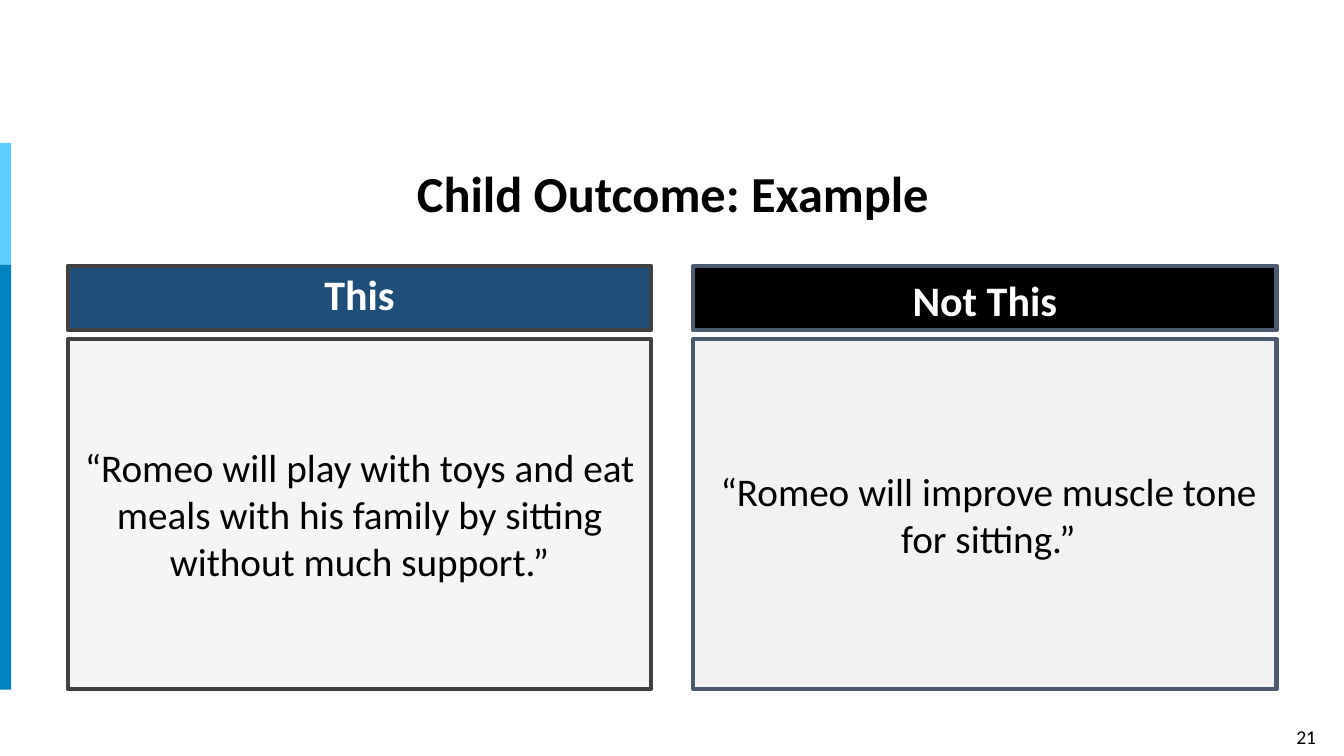
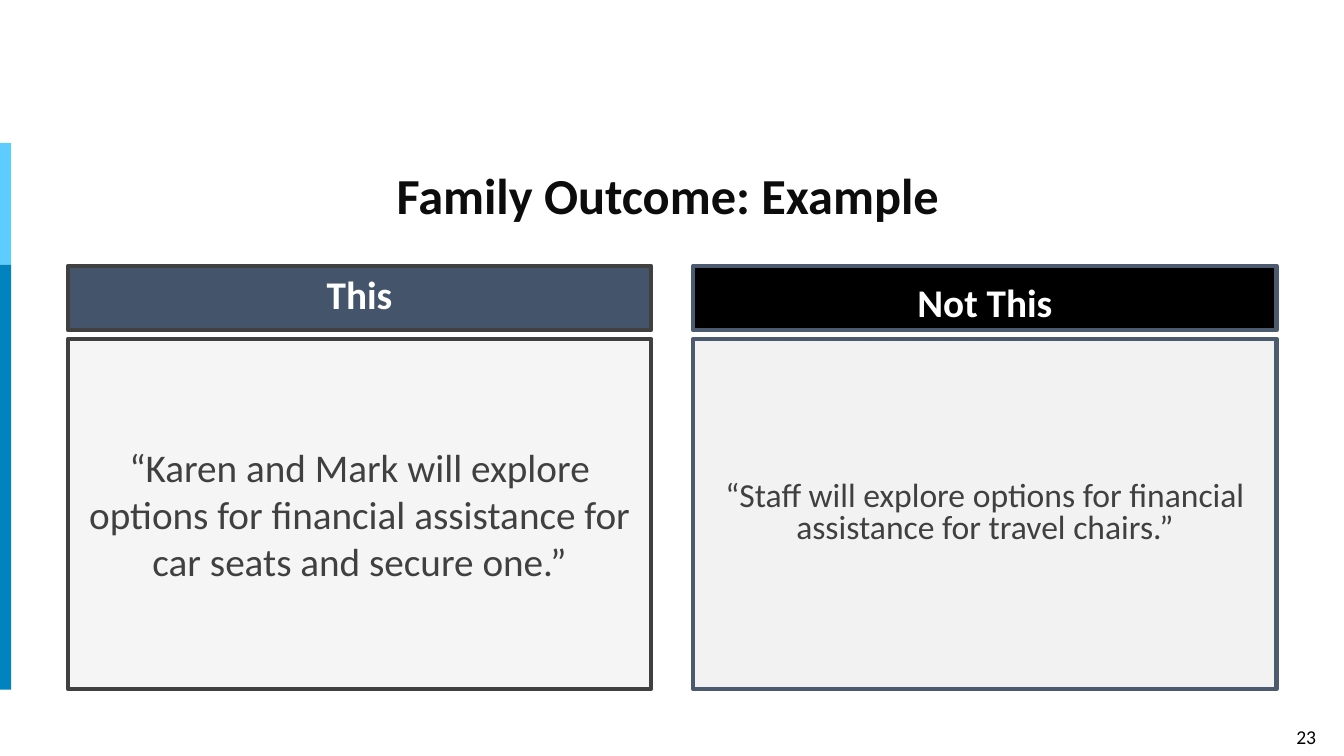
from dataclasses import dataclass

from pptx import Presentation
from pptx.dml.color import RGBColor
from pptx.enum.shapes import MSO_SHAPE
from pptx.enum.text import MSO_ANCHOR, MSO_AUTO_SIZE, PP_ALIGN
from pptx.oxml.xmlchemy import OxmlElement
from pptx.util import Cm, Pt

FONT = "Calibri"
COLORS = {
    "white": "FFFFFF",
    "black": "000000",
    "ink": "0C0C0C",
    "charcoal": "404040",
    "navy": "1F4E79",
    "slate": "44546A",
    "slate_line": "4B5A6F",
    "pale": "F5F5F5",
    "pale_grey": "F2F2F2",
    "sky": "5DCDFF",
    "ocean": "0083BF",
}
INSETS = (0.25, 0.13, 0.25, 0.13)
TITLE_BOX = (1.71, 3.25, 30.5, 3.2)
COLUMN_LEFT, COLUMN_TOP = 1.71, 6.7
COLUMN_WIDTH, COLUMN_HEIGHT = 14.7, 10.66
COLUMN_GAP = 1.06
HEADER_HEIGHT, HEADER_GAP = 1.62, 0.22
PAGE_BOX = (32.08, 18.14, 1.68, 0.86)
BANDS = [("sky", 3.6, 3.07), ("ocean", 6.67, 10.71)]


@dataclass
class TextStyle:
    size: int
    color: str
    bold: bool = False
    spacing: float = 1.0
    anchor: MSO_ANCHOR = MSO_ANCHOR.MIDDLE
    indent: float = 0
    insets: tuple = INSETS


@dataclass
class Panel:
    heading: str
    heading_style: TextStyle
    heading_fill: str
    quote: str
    quote_style: TextStyle
    quote_fill: str
    line: str


def rgb(name):
    return RGBColor.from_string(COLORS[name])


def place(shape, box):
    shape.left, shape.top, shape.width, shape.height = (Cm(value) for value in box)


def paint(shape, fill=None, line=None, line_width=3):
    if fill:
        shape.fill.solid()
        shape.fill.fore_color.rgb = rgb(fill)
    else:
        shape.fill.background()
    if line:
        shape.line.color.rgb = rgb(line)
        shape.line.width = Pt(line_width)
    else:
        shape.line.fill.background()


def write(shape, text, style):
    frame = shape.text_frame
    frame.word_wrap = True
    frame.auto_size = MSO_AUTO_SIZE.NONE
    frame.vertical_anchor = style.anchor
    (frame.margin_left, frame.margin_top,
     frame.margin_right, frame.margin_bottom) = (Cm(value) for value in style.insets)
    paragraph = frame.paragraphs[0]
    paragraph.alignment = PP_ALIGN.CENTER
    paragraph.line_spacing = style.spacing
    paragraph.space_before = Pt(0)
    properties = paragraph._p.get_or_add_pPr()
    properties.set("marL", str(Cm(style.indent)))
    properties.set("indent", "0")
    properties.append(OxmlElement("a:buNone"))
    run = paragraph.add_run()
    run.text = text
    run.font.name = FONT
    run.font.size = Pt(style.size)
    run.font.bold = style.bold
    run.font.color.rgb = rgb(style.color)


def add_rectangle(slide, box):
    shape = slide.shapes.add_shape(MSO_SHAPE.RECTANGLE, *(Cm(value) for value in box))
    shape.shadow.inherit = False
    return shape


def add_frame(slide, page_number):
    for color, top, height in BANDS:
        paint(add_rectangle(slide, (-0.08, top, 0.36, height)), color)
    number = add_rectangle(slide, PAGE_BOX)
    paint(number, line="white", line_width=0.75)
    write(number, str(page_number), TextStyle(14, "black", anchor=MSO_ANCHOR.TOP))


def fill_panel(header, body, box, panel):
    left, top, width, height = box
    offset = HEADER_HEIGHT + HEADER_GAP
    place(header, (left, top, width, HEADER_HEIGHT))
    paint(header, panel.heading_fill, panel.line)
    write(header, panel.heading, panel.heading_style)
    place(body, (left, top + offset, width, height - offset))
    paint(body, panel.quote_fill, panel.line)
    write(body, panel.quote, panel.quote_style)


def add_comparison(presentation, title, title_style, panels, page_number):
    slide = presentation.slides.add_slide(presentation.slide_layouts[4])
    add_frame(slide, page_number)
    place(slide.shapes.title, TITLE_BOX)
    write(slide.shapes.title, title, title_style)
    holders = {holder.placeholder_format.idx: holder for holder in slide.placeholders}
    for column, panel in enumerate(panels):
        left = COLUMN_LEFT + column * (COLUMN_WIDTH + COLUMN_GAP)
        box = (left, COLUMN_TOP, COLUMN_WIDTH, COLUMN_HEIGHT)
        fill_panel(holders[2 * column + 1], holders[2 * column + 2], box, panel)


def this_panel(fill, heading_size, quote, quote_style):
    heading_style = TextStyle(heading_size, "white", bold=True, spacing=0.8)
    return Panel("This", heading_style, fill, quote, quote_style, "pale", "charcoal")


def not_this_panel(heading_size, quote, quote_style):
    heading_style = TextStyle(heading_size, "white", bold=True, anchor=MSO_ANCHOR.BOTTOM)
    return Panel("Not This", heading_style, "black", quote, quote_style,
                 "pale_grey", "slate_line")


def main():
    presentation = Presentation()
    presentation.slide_width, presentation.slide_height = Cm(33.87), Cm(19.05)
    add_comparison(
        presentation, "Child Outcome: Example", TextStyle(36, "black", bold=True),
        [
            this_panel("navy", 30,
                       "“Romeo will play with toys and eat meals with his family "
                       "by sitting without much support.”",
                       TextStyle(28, "black")),
            not_this_panel(30, "“Romeo will improve muscle tone for sitting.”",
                           TextStyle(28, "black", indent=0.18)),
        ], 21)
    add_comparison(
        presentation, "Family Outcome: Example",
        TextStyle(36, "ink", bold=True, spacing=0.8, insets=(0, 0.5, 0.25, 0.13)),
        [
            this_panel("slate", 28,
                       "“Karen and Mark will explore options for financial "
                       "assistance for car seats and secure one.”",
                       TextStyle(28, "charcoal")),
            not_this_panel(28,
                           "“Staff will explore options for financial assistance "
                           "for travel chairs.”",
                           TextStyle(24, "charcoal", spacing=0.8)),
        ], 23)
    presentation.save("out.pptx")


if __name__ == "__main__":
    main()
